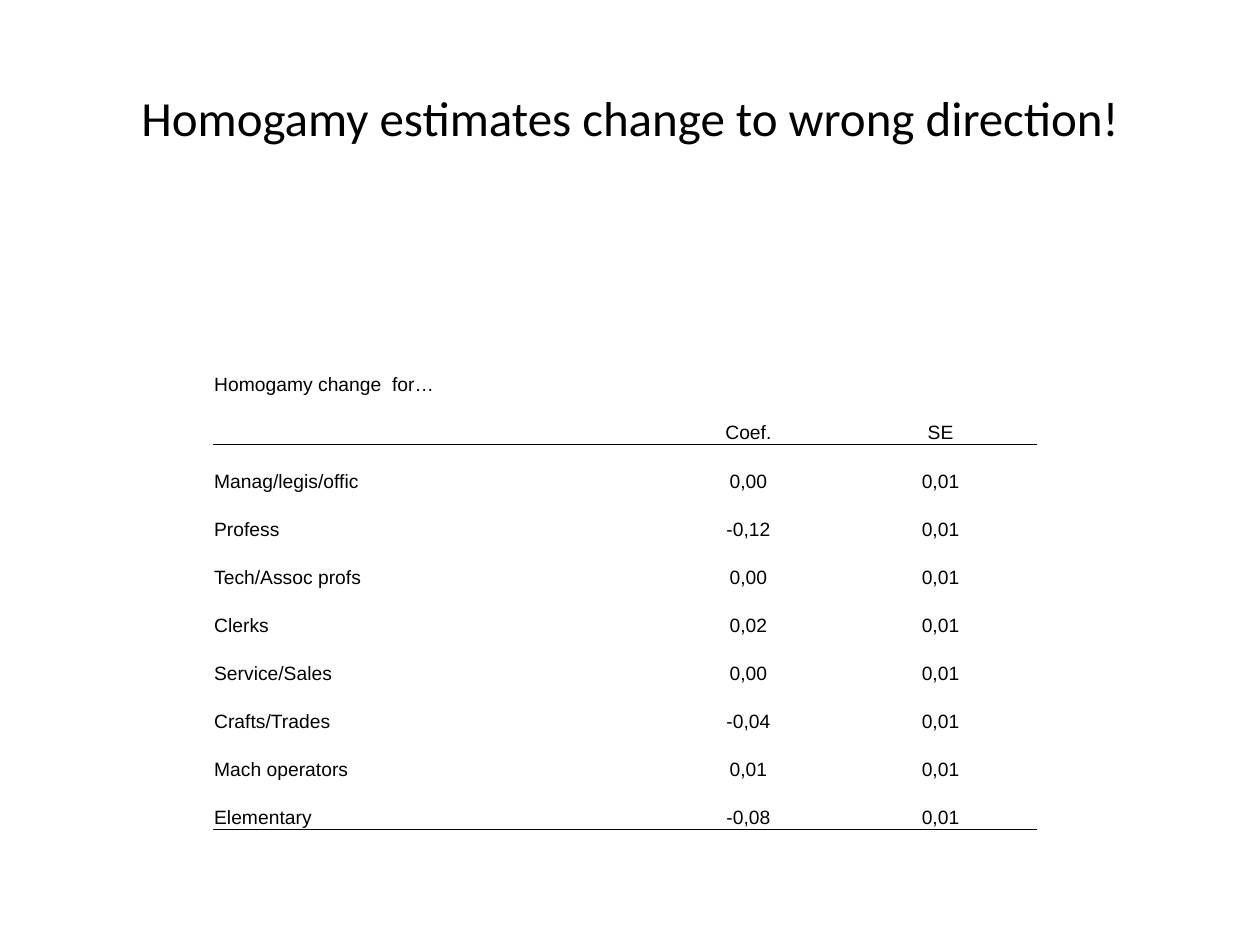
from lxml.etree import SubElement
from pptx import Presentation
from pptx.dml.color import RGBColor
from pptx.enum.text import MSO_ANCHOR, PP_ALIGN
from pptx.oxml.ns import qn
from pptx.util import Pt

COLORS = {"text": "000000", "rule": "000000"}
COLUMN_WIDTHS = (251.3, 109.4, 110.2)
ROW_HEIGHT = 27.5
RULED_ROWS = (1, 9)
ROWS = (
    ("Homogamy change  for…", "", ""),
    ("", "Coef.", "SE"),
    ("Manag/legis/offic", "0,00", "0,01"),
    ("Profess", "-0,12", "0,01"),
    ("Tech/Assoc profs", "0,00", "0,01"),
    ("Clerks", "0,02", "0,01"),
    ("Service/Sales", "0,00", "0,01"),
    ("Crafts/Trades", "-0,04", "0,01"),
    ("Mach operators", "0,01", "0,01"),
    ("Elementary", "-0,08", "0,01"),
)


def add_run(paragraph, text, font_name, size):
    """Add one formatted run to a paragraph."""
    run = paragraph.add_run()
    run.text = text
    run.font.name = font_name
    run.font.size = Pt(size)
    run.font.color.rgb = RGBColor.from_string(COLORS["text"])


def set_title(slide, text):
    """Place and format the title placeholder."""
    title = slide.shapes.title
    title.left, title.top, title.width, title.height = Pt(36), Pt(21.6), Pt(648), Pt(90)
    title.text_frame.vertical_anchor = MSO_ANCHOR.MIDDLE
    paragraph = title.text_frame.paragraphs[0]
    paragraph.alignment = PP_ALIGN.CENTER
    add_run(paragraph, text, "Calibri", 28)


def set_borders(cell, ruled_sides):
    """Draw a thin rule on the named sides and clear the others."""
    properties = cell._tc.get_or_add_tcPr()
    for side in ("L", "R", "T", "B"):
        line = SubElement(properties, qn(f"a:ln{side}"), w=str(Pt(0.5)))
        if side in ruled_sides:
            fill = SubElement(line, qn("a:solidFill"))
            SubElement(fill, qn("a:srgbClr"), val=COLORS["rule"])
        else:
            SubElement(line, qn("a:noFill"))


def format_cell(cell, text, alignment, ruled_sides):
    """Set the margins, borders, fill and text of a cell."""
    cell.margin_left = cell.margin_right = cell.margin_top = Pt(0.7)
    cell.margin_bottom = Pt(0)
    cell.vertical_anchor = MSO_ANCHOR.BOTTOM
    set_borders(cell, ruled_sides)
    cell.fill.background()
    if text:
        paragraph = cell.text_frame.paragraphs[0]
        paragraph.alignment = alignment
        add_run(paragraph, text, "Arial", 11)


def add_estimates_table(slide):
    """Add the table of coefficients and standard errors."""
    frame = slide.shapes.add_table(
        len(ROWS), len(COLUMN_WIDTHS), Pt(121.7), Pt(198.7),
        Pt(sum(COLUMN_WIDTHS)), Pt(ROW_HEIGHT * len(ROWS)))
    table = frame.table
    table.first_row = table.horz_banding = False
    for column, width in zip(table.columns, COLUMN_WIDTHS):
        column.width = Pt(width)
    for row_index, values in enumerate(ROWS):
        table.rows[row_index].height = Pt(ROW_HEIGHT)
        ruled_sides = "B" if row_index in RULED_ROWS else ""
        if row_index - 1 in RULED_ROWS:
            ruled_sides += "T"
        for column_index, text in enumerate(values):
            alignment = PP_ALIGN.CENTER if column_index else PP_ALIGN.LEFT
            format_cell(table.cell(row_index, column_index), text, alignment, ruled_sides)
    table.cell(0, 0).merge(table.cell(0, 1))


def main():
    """Build and save the presentation."""
    presentation = Presentation()
    presentation.slide_width, presentation.slide_height = Pt(720), Pt(540)
    slide = presentation.slides.add_slide(presentation.slide_layouts.get_by_name("Title Only"))
    set_title(slide, "Homogamy estimates change to wrong direction!")
    add_estimates_table(slide)
    presentation.save("out.pptx")


if __name__ == "__main__":
    main()
